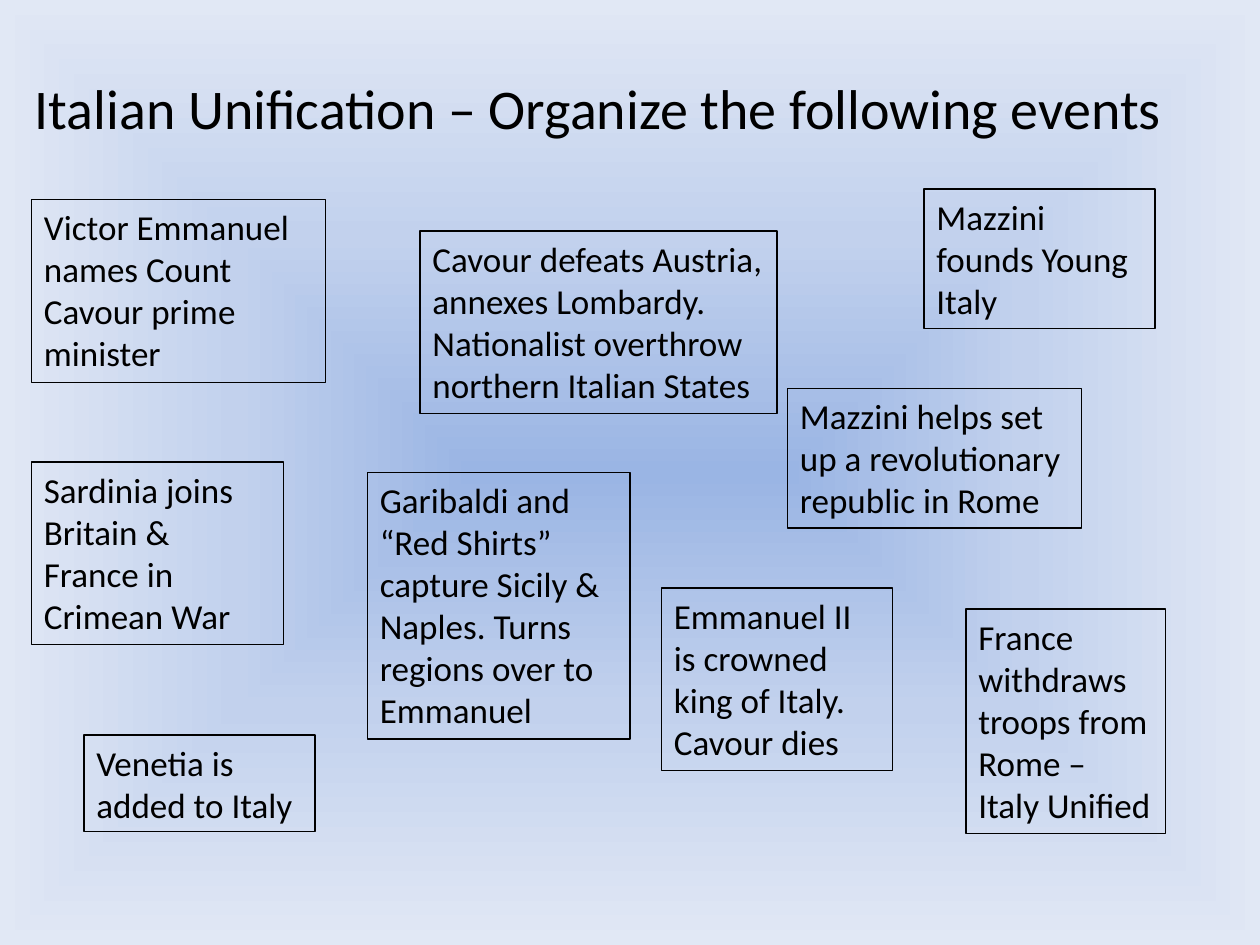
"""Build the Italian Unification event-ordering slide."""
from pptx import Presentation
from pptx.dml.color import RGBColor
from pptx.enum.text import MSO_ANCHOR, MSO_AUTO_SIZE, PP_ALIGN
from pptx.oxml import parse_xml
from pptx.oxml.ns import nsdecls
from pptx.util import Emu, Pt

EMU_PER_PX = 7620
LEFT, CENTER = PP_ALIGN.LEFT, PP_ALIGN.CENTER
TOP, MIDDLE = MSO_ANCHOR.TOP, MSO_ANCHOR.MIDDLE
NO_FIT, GROW = MSO_AUTO_SIZE.NONE, MSO_AUTO_SIZE.SHAPE_TO_FIT_TEXT
FONT = "Calibri"
BLACK = "000000"
BACKGROUND_STOPS = [(0, "9AB5E4"), (50, "C2D1ED"), (100, "E1E8F5")]

EVENTS = [
    ("Mazzini founds Young Italy", 880, 180, 220, 133),
    ("Mazzini helps set up a revolutionary republic in Rome", 750, 370, 280, 133),
    ("Victor Emmanuel names Count Cavour prime minister", 30, 190, 280, 174),
    ("Sardinia joins Britain & France in Crimean War", 30, 440, 240, 174),
    ("Cavour defeats Austria, annexes Lombardy. "
     "Nationalist overthrow northern Italian States", 400, 220, 340, 174),
    ("Garibaldi and “Red Shirts” capture Sicily & Naples. "
     "Turns regions over to Emmanuel", 350, 450, 250, 254),
    ("Emmanuel II is crowned king of Italy. Cavour dies", 630, 560, 220, 174),
    ("Venetia is added to Italy", 80, 700, 220, 92),
    ("France withdraws troops from Rome – Italy Unified", 920, 580, 190, 214),
]


def px(length):
    """Turn a length in px into EMU."""
    return Emu(length * EMU_PER_PX)


def color(value):
    """Turn a hex string into a colour."""
    return RGBColor.from_string(value)


def write_text(box, text, size=20, align=LEFT, anchor=TOP, fit=GROW):
    """Write one formatted paragraph into a box."""
    frame = box.text_frame
    frame.word_wrap = True
    frame.auto_size = fit
    frame.vertical_anchor = anchor
    para = frame.paragraphs[0]
    para.alignment = align
    span = para.add_run()
    span.text = text
    span.font.name = FONT
    span.font.size = Pt(size)
    span.font.color.rgb = color(BLACK)


def set_background(page, stops):
    """Fill the page with a gradient that spreads from its centre."""
    marks = "".join(
        f'<a:gs pos="{position * 1000}"><a:srgbClr val="{value}"/></a:gs>'
        for position, value in stops
    )
    background = parse_xml(
        f'<p:bg {nsdecls("p", "a")}><p:bgPr><a:gradFill rotWithShape="1">'
        f'<a:gsLst>{marks}</a:gsLst><a:path path="shape">'
        '<a:fillToRect l="50000" t="50000" r="50000" b="50000"/></a:path>'
        '</a:gradFill><a:effectLst/></p:bgPr></p:bg>'
    )
    page.element.cSld.insert(0, background)


def add_title(page, text):
    """Place and format the title."""
    title = page.shapes.title
    title.left, title.top, title.width, title.height = map(px, (0, 60, 1140, 84))
    write_text(title, text, size=32, align=CENTER, anchor=MIDDLE, fit=NO_FIT)


def add_event(page, text, left, top, width, height):
    """Add one outlined event box."""
    box = page.shapes.add_textbox(px(left), px(top), px(width), px(height))
    box.line.color.rgb = color(BLACK)
    box.line.width = Pt(0.75)
    write_text(box, text)


def main():
    """Build and save the deck."""
    deck = Presentation()
    deck.slide_width, deck.slide_height = px(1200), px(900)
    page = deck.slides.add_slide(deck.slide_layouts[5])
    set_background(page, BACKGROUND_STOPS)
    add_title(page, "Italian Unification – Organize the following events")
    for event in EVENTS:
        add_event(page, *event)
    deck.save("out.pptx")


if __name__ == "__main__":
    main()
